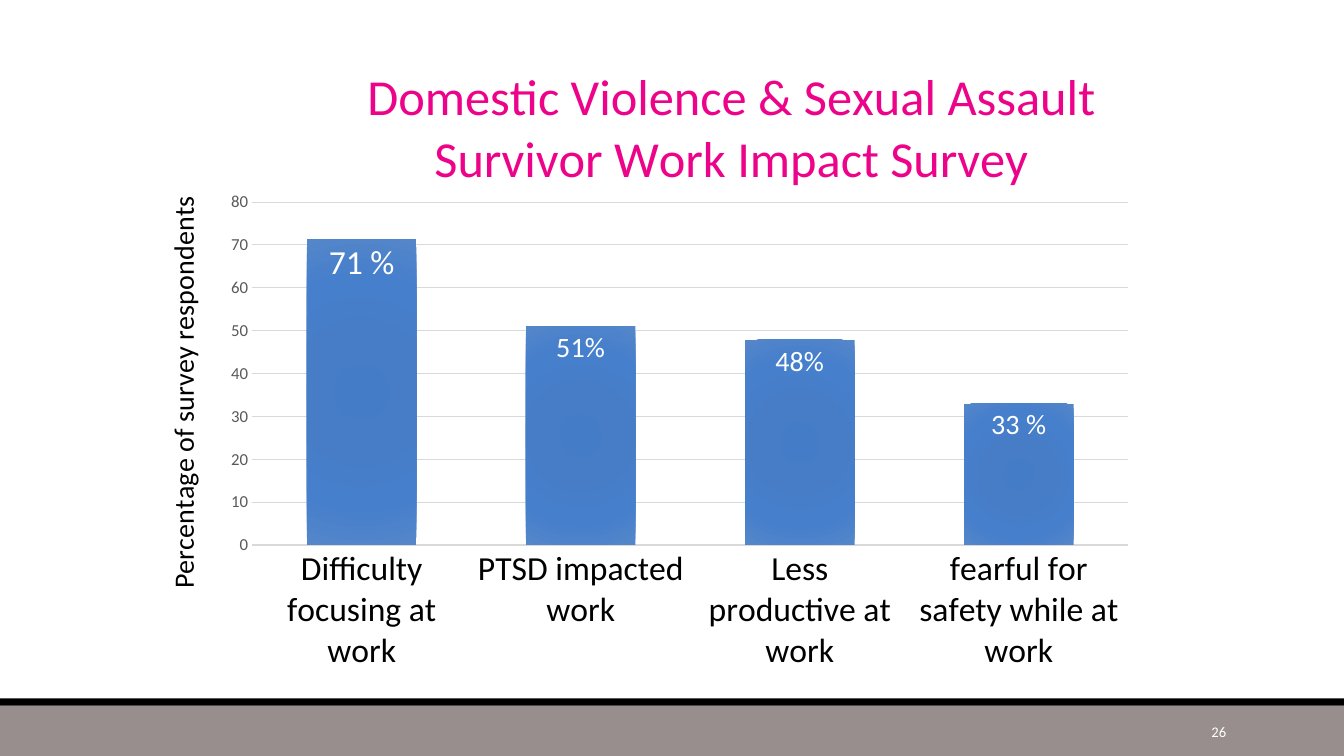
"""Build the survey slide with its column chart."""
import pptx
import pptx.chart.data
import pptx.dml.color
import pptx.enum.chart
import pptx.enum.shapes
import pptx.enum.text
import pptx.oxml
import pptx.oxml.ns
import pptx.util

Inches, Pt = pptx.util.Inches, pptx.util.Pt
RGB = pptx.dml.color.RGBColor
qn, nsdecls = pptx.oxml.ns.qn, pptx.oxml.ns.nsdecls
Align, Anchor = pptx.enum.text.PP_ALIGN, pptx.enum.text.MSO_ANCHOR
Tick = pptx.enum.chart.XL_TICK_MARK

TITLE = "Domestic Violence & Sexual Assault Survivor Work Impact Survey"
AXIS = "Percentage of survey respondents"
BARS = [
    ("Difficulty focusing at work", 71.28, "71 %", 24),
    ("PTSD impacted work", 51.06, "51%", 20),
    ("Less productive at work", 47.87, "48%", 20),
    ("fearful for safety while at work", 32.98, "33 %", 20),
]
STOPS = [(0, "447CC7"), (34, "477DC6"), (70, "467FCC"), (100, "5486CA")]
NUMBER = "26"
FONT = "Calibri"
PINK, BLACK, WHITE = RGB(0xED, 0x03, 0x8A), RGB(0, 0, 0), RGB(255, 255, 255)
TAUPE, GREY = RGB(0x99, 0x8E, 0x8E), RGB(0x59, 0x59, 0x59)
PALE, DARK = RGB(0xD9, 0xD9, 0xD9), RGB(0x40, 0x40, 0x40)
BANDS = [(7, 0.5, TAUPE), (6.93, 0.07, BLACK)]


def set_font(font, size, color):
    """Give a font its face, size and colour."""
    font.name, font.size, font.bold = FONT, Pt(size), False
    font.color.rgb = color


def write(frame, text, size=20, color=BLACK, align=None):
    """Put formatted text in a text frame."""
    para = frame.paragraphs[0]
    para.alignment = align
    run = para.add_run()
    run.text = text
    set_font(run.font, size, color)


def place(node, index, inner=False, **spots):
    """Set the manual layout of a chart part, in fractions of the chart."""
    old = node.find(qn("c:layout"))
    if old is not None:
        node.remove(old)
    target = '<c:layoutTarget val="inner"/>' if inner else ""
    modes = "".join(f'<c:{k}Mode val="edge"/>' for k in "xy")
    sizes = "".join(f'<c:{k} val="{v}"/>' for k, v in spots.items())
    node.insert(index, pptx.oxml.parse_xml(
        f'<c:layout {nsdecls("c")}><c:manualLayout>{target}{modes}{sizes}'
        '</c:manualLayout></c:layout>'))


def shade(series):
    """Fill the columns with a round gradient."""
    series.format.fill.solid()
    solid = series.format.fill._xPr.find(qn("a:solidFill"))
    stops = "".join(f'<a:gs pos="{p * 1000}"><a:srgbClr val="{c}"/></a:gs>'
                    for p, c in STOPS)
    solid.getparent().replace(solid, pptx.oxml.parse_xml(
        f'<a:gradFill {nsdecls("a")} rotWithShape="1"><a:gsLst>{stops}</a:gsLst>'
        '<a:path path="circle"><a:fillToRect l="100000" t="100000" r="100000" '
        'b="100000"/></a:path></a:gradFill>'))


def add_bands(slide, width):
    """Draw the footer bands."""
    for top, height, color in BANDS:
        band = slide.shapes.add_shape(
            pptx.enum.shapes.MSO_SHAPE.RECTANGLE, 0, Inches(top), width, Inches(height))
        band.shadow.inherit = False
        band.fill.solid()
        band.fill.fore_color.rgb = color
        band.line.fill.background()


def add_survey(slide):
    """Draw the survey chart."""
    data = pptx.chart.data.CategoryChartData()
    data.categories = [bar[0] for bar in BARS]
    data.add_series("Series 1", [bar[1] for bar in BARS])
    chart = slide.shapes.add_chart(
        pptx.enum.chart.XL_CHART_TYPE.COLUMN_CLUSTERED, Inches(1.47), Inches(0.26),
        Inches(9.92), Inches(6.54), data).chart
    set_font(chart.font, 10, BLACK)
    chart.has_legend = False
    write(chart.chart_title.text_frame, TITLE, size=36, color=PINK)
    place(chart.chart_title._element, 1, x=0.21, y=0.04)

    cat, val = chart.category_axis, chart.value_axis
    for axis, size, color in [(cat, 24, BLACK), (val, 12, GREY)]:
        axis.major_tick_mark = axis.minor_tick_mark = Tick.NONE
        set_font(axis.tick_labels.font, size, color)
    cat.format.line.color.rgb, cat.format.line.width = PALE, Pt(1)
    val.format.line.fill.background()
    val.minimum_scale, val.maximum_scale, val.major_unit = 0, 80, 10
    grid = val.major_gridlines.format.line
    grid.color.rgb, grid.width = PALE, Pt(0.75)
    frame = val.axis_title.text_frame
    write(frame, AXIS, size=20)
    frame._txBody.bodyPr.set("rot", "-5400000")
    frame._txBody.bodyPr.set("vert", "horz")
    place(val.axis_title._element, 1, x=0.01, y=0.25)

    plot = chart.plots[0]
    plot.gap_width, plot.overlap, plot.vary_by_categories = 100, -24, False
    place(plot._element.getparent(), 0, inner=True, x=0.104, y=0.267, w=0.876, h=0.52)
    series = plot.series[0]
    shade(series)
    inside = pptx.enum.chart.XL_LABEL_POSITION.INSIDE_END
    labels = series.data_labels
    labels.show_value, labels.position = True, inside
    set_font(labels.font, 12, DARK)
    for i, (_, _, text, size) in enumerate(BARS):
        label = series.points[i].data_label
        write(label.text_frame, text, size=size, color=WHITE)
        label.position = inside


def main():
    """Make and save the deck."""
    deck = pptx.Presentation()
    deck.slide_width, deck.slide_height = Inches(13.33), Inches(7.5)
    slide = deck.slides.add_slide(deck.slide_layouts[6])
    add_bands(slide, deck.slide_width)
    add_survey(slide)
    box = slide.shapes.add_textbox(Inches(10.83), Inches(7.06), Inches(1.43), Inches(0.4))
    box.text_frame.word_wrap = True
    box.text_frame.vertical_anchor = Anchor.MIDDLE
    write(box.text_frame, NUMBER, size=10.5, color=WHITE, align=Align.RIGHT)
    deck.save("out.pptx")


if __name__ == "__main__":
    main()
